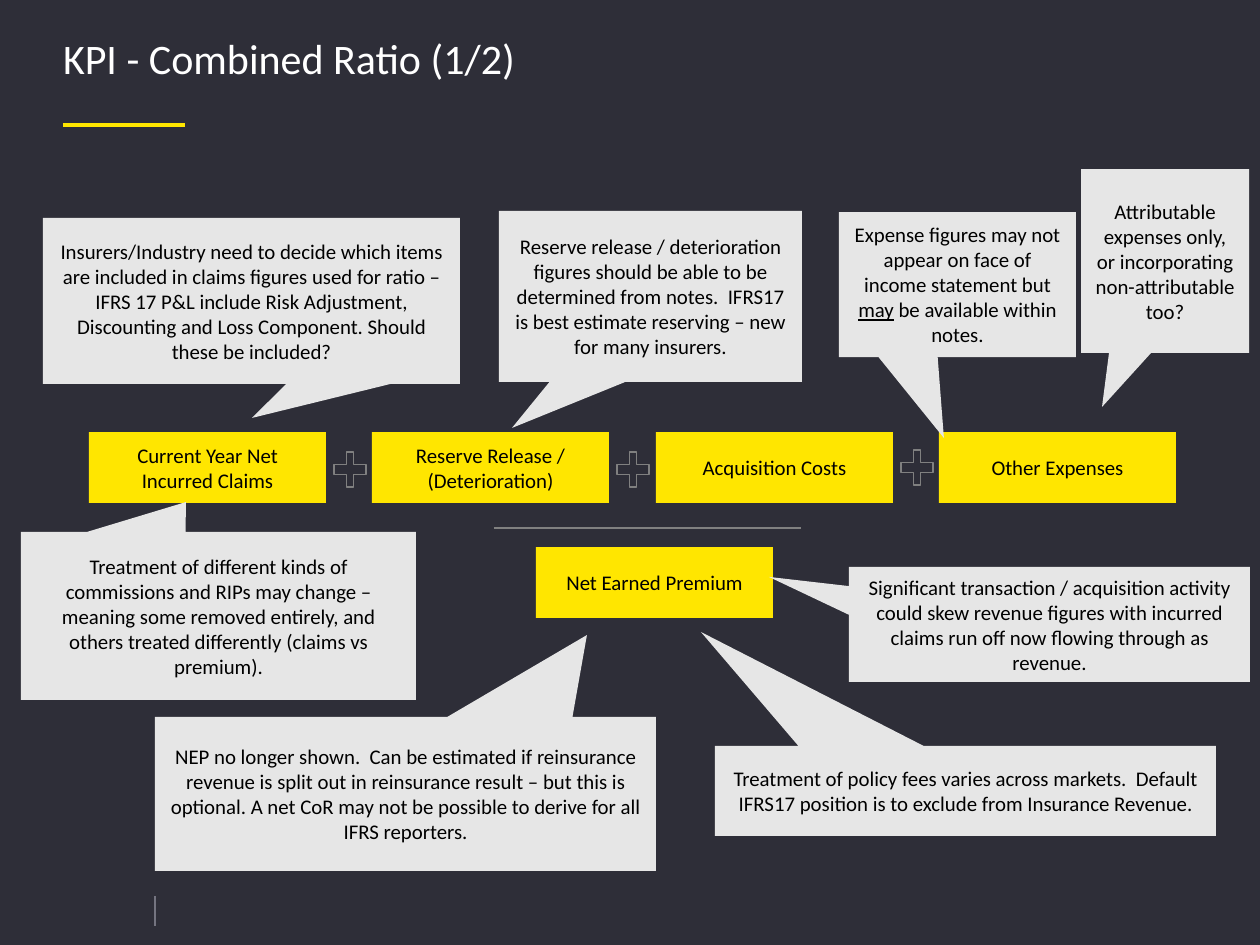
from dataclasses import dataclass

from lxml.etree import SubElement
from pptx import Presentation
from pptx.dml.color import RGBColor
from pptx.enum.shapes import MSO_CONNECTOR, MSO_SHAPE
from pptx.enum.text import MSO_ANCHOR, MSO_AUTO_SIZE, PP_ALIGN
from pptx.oxml.ns import qn
from pptx.util import Emu, Pt

PX_PER_INCH = 126
FONT = "Calibri"
BODY_SIZE = Pt(11.9)
DARK = RGBColor(0x2E, 0x2E, 0x38)
YELLOW = RGBColor(0xFF, 0xE6, 0x00)
PALE = RGBColor(0xE6, 0xE6, 0xE6)
GREY = RGBColor(0x80, 0x80, 0x80)
SLATE = RGBColor(0x74, 0x74, 0x80)
WHITE = RGBColor(0xFF, 0xFF, 0xFF)
BLACK = RGBColor(0x00, 0x00, 0x00)


@dataclass
class Box:
    left: int
    top: int
    width: int
    height: int


@dataclass
class Callout:
    box: Box
    tip: tuple[int, int]
    text: str
    underlined: str = ""


@dataclass
class Rule:
    start: tuple[int, int]
    end: tuple[int, int]
    color: RGBColor
    weight: float


TERMS = [
    "Current Year Net Incurred Claims",
    "Reserve Release / (Deterioration)",
    "Acquisition Costs",
    "Other Expenses",
]
PLUS_TOPS = [452, 452, 450]
TERM_LEFT, TERM_TOP, TERM_WIDTH, TERM_HEIGHT = 89, 432, 237, 71
TWO_TERM_PITCHES = 567
PLUS_OFFSET = 245

RULES = [
    Rule((63, 125), (185, 125), YELLOW, 2.25),
    Rule((155, 896), (155, 926), SLATE, 0.75),
    Rule((494, 528), (801, 528), GREY, 0.75),
]

CALLOUTS = [
    Callout(Box(155, 717, 501, 154), (587, 635),
            "NEP no longer shown.  Can be estimated if reinsurance revenue is split out in "
            "reinsurance result – but this is optional. A net CoR may not be possible to "
            "derive for all IFRS reporters."),
    Callout(Box(43, 218, 417, 166), (252, 418),
            "Insurers/Industry need to decide which items are included in claims figures "
            "used for ratio – IFRS 17 P&L include Risk Adjustment, Discounting and Loss "
            "Component. Should these be included?"),
    Callout(Box(839, 212, 237, 145), (944, 438),
            "Expense figures may not appear on face of income statement but may be "
            "available within notes.", " may be"[1:4]),
    Callout(Box(499, 211, 303, 171), (512, 428),
            "Reserve release / deterioration figures should be able to be determined from "
            "notes.  IFRS17 is best estimate reserving – new for many insurers."),
    Callout(Box(21, 532, 395, 168), (186, 502),
            "Treatment of different kinds of commissions and RIPs may change –meaning some "
            "removed entirely, and others treated differently (claims vs premium)."),
    Callout(Box(715, 746, 501, 90), (701, 632),
            "Treatment of policy fees varies across markets.  Default IFRS17 position is to "
            "exclude from Insurance Revenue."),
    Callout(Box(849, 567, 401, 115), (769, 577),
            "Significant transaction / acquisition activity could skew revenue figures with "
            "incurred claims run off now flowing through as revenue."),
    Callout(Box(1081, 169, 168, 184), (1102, 407),
            "Attributable expenses only, or incorporating non-attributable too?"),
]


def px(length: int) -> Emu:
    return Emu(round(length * 914400 / PX_PER_INCH))


def add_box(slide, preset: MSO_SHAPE, box: Box):
    shape = slide.shapes.add_shape(
        preset, px(box.left), px(box.top), px(box.width), px(box.height))
    shape.shadow.inherit = False
    return shape


def add_label(slide, preset: MSO_SHAPE, box: Box, fill: RGBColor, text: str,
              underlined: str = ""):
    shape = add_box(slide, preset, box)
    shape.fill.solid()
    shape.fill.fore_color.rgb = fill
    shape.line.fill.background()
    frame = shape.text_frame
    frame.word_wrap = True
    frame.vertical_anchor = MSO_ANCHOR.MIDDLE
    paragraph = frame.paragraphs[0]
    paragraph.alignment = PP_ALIGN.CENTER
    parts = text.rpartition(underlined) if underlined else (text,)
    for part in parts:
        run = paragraph.add_run()
        run.text = part
        run.font.name = FONT
        run.font.size = BODY_SIZE
        run.font.color.rgb = BLACK
        if part == underlined:
            run.font.underline = True
    return shape


def add_callout(slide, callout: Callout) -> None:
    box = callout.box
    shape = add_label(slide, MSO_SHAPE.RECTANGULAR_CALLOUT, box, PALE,
                      callout.text, callout.underlined)
    tip_x, tip_y = callout.tip
    shape.adjustments[0] = (tip_x - box.left) / box.width - 0.5
    shape.adjustments[1] = (tip_y - box.top) / box.height - 0.5


def add_plus(slide, left: int, top: int) -> None:
    plus = add_box(slide, MSO_SHAPE.CROSS, Box(left, top, 32, 35))
    plus.adjustments[0] = 0.39
    plus.fill.background()
    plus.line.color.rgb = GREY
    plus.line.width = Pt(0.75)


def add_rule(slide, rule: Rule) -> None:
    line = slide.shapes.add_connector(
        MSO_CONNECTOR.STRAIGHT, *map(px, rule.start + rule.end))
    line.line.color.rgb = rule.color
    line.line.width = Pt(rule.weight)
    SubElement(line._element.spPr, qn("a:effectLst"))


def set_title(slide, text: str) -> None:
    title = slide.shapes.title
    title.left, title.top, title.width, title.height = map(px, (63, 40, 1134, 82))
    frame = title.text_frame
    frame.text = text
    frame.word_wrap = True
    frame.auto_size = MSO_AUTO_SIZE.NONE
    frame.vertical_anchor = MSO_ANCHOR.TOP
    frame.margin_left = frame.margin_top = frame.margin_right = frame.margin_bottom = 0
    paragraph = frame.paragraphs[0]
    paragraph.alignment = PP_ALIGN.LEFT
    paragraph.line_spacing = 0.85
    font = paragraph.runs[0].font
    font.name = FONT
    font.size = Pt(24)
    font.color.rgb = WHITE


def main() -> None:
    deck = Presentation()
    deck.slide_width, deck.slide_height = px(1260), px(945)
    slide = deck.slides.add_slide(deck.slide_layouts[5])
    slide.background.fill.solid()
    slide.background.fill.fore_color.rgb = DARK
    set_title(slide, "KPI - Combined Ratio (1/2)")
    for rule in RULES:
        add_rule(slide, rule)
    term_lefts = [TERM_LEFT + i * TWO_TERM_PITCHES // 2 for i in range(len(TERMS))]
    for left, term in zip(term_lefts, TERMS):
        add_label(slide, MSO_SHAPE.RECTANGLE,
                  Box(left, TERM_TOP, TERM_WIDTH, TERM_HEIGHT), YELLOW, term)
    add_label(slide, MSO_SHAPE.RECTANGLE,
              Box(536, 547, TERM_WIDTH, TERM_HEIGHT), YELLOW, "Net Earned Premium")
    for left, top in zip(term_lefts, PLUS_TOPS):
        add_plus(slide, left + PLUS_OFFSET, top)
    for callout in CALLOUTS:
        add_callout(slide, callout)
    deck.save("out.pptx")


if __name__ == "__main__":
    main()
